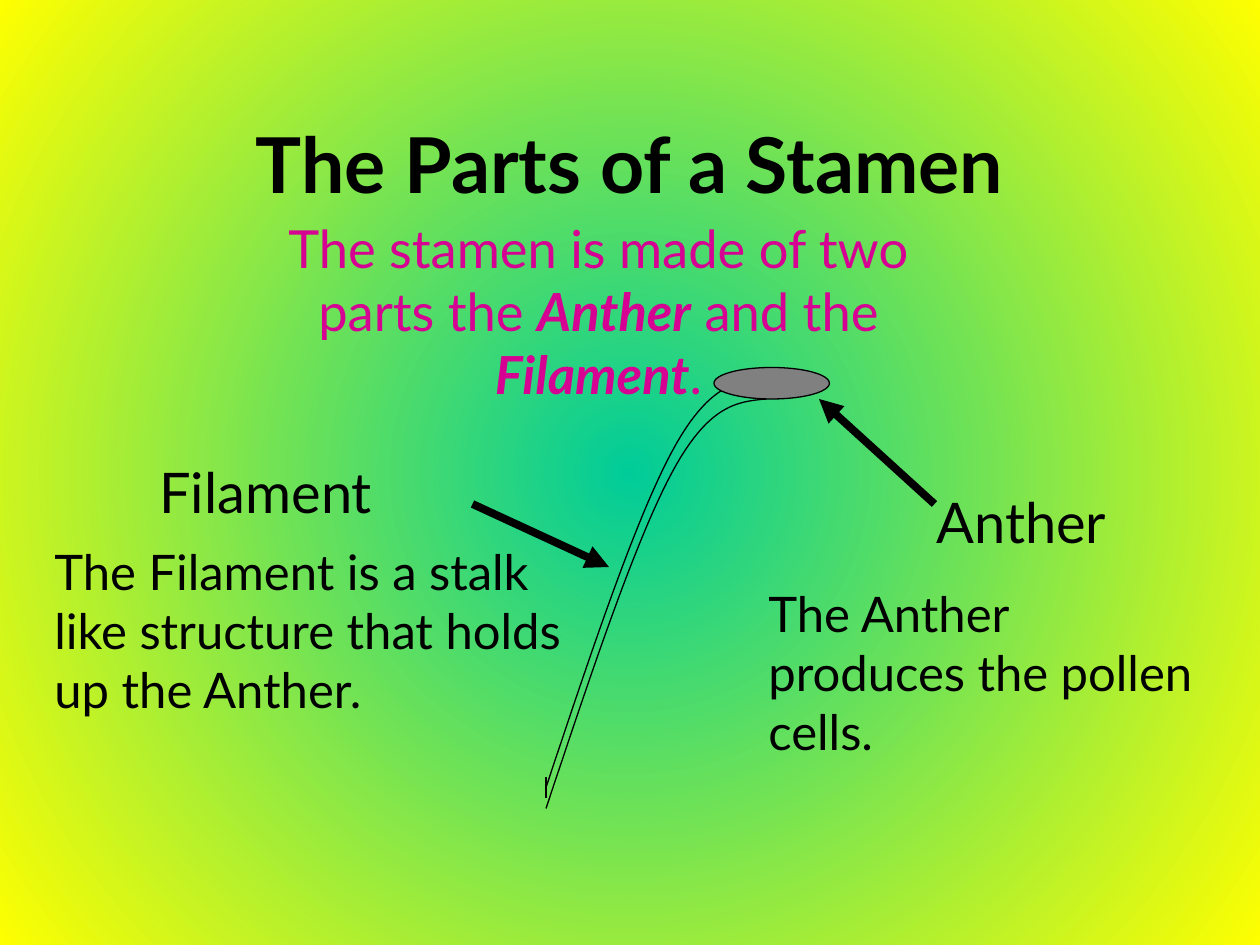
"""Build a slide that names the parts of a stamen."""
import pptx
import pptx.util
import pptx.dml.color
import pptx.enum.shapes
import pptx.enum.text
import pptx.oxml
import pptx.oxml.ns

BLACK = pptx.dml.color.RGBColor(0x00, 0x00, 0x00)
PINK = pptx.dml.color.RGBColor(0xD6, 0x00, 0x93)
GRAY = pptx.dml.color.RGBColor(0x80, 0x80, 0x80)
TEAL = pptx.dml.color.RGBColor(0x00, 0xCC, 0x99)
YELLOW = pptx.dml.color.RGBColor(0xFF, 0xFF, 0x00)
SPACE = pptx.oxml.ns.nsdecls("a")
LEFT = pptx.enum.text.PP_ALIGN.LEFT
CENTER = pptx.enum.text.PP_ALIGN.CENTER

deck = pptx.Presentation()
deck.slide_width = pptx.util.Inches(10)
deck.slide_height = pptx.util.Inches(7.5)
slide = deck.slides.add_slide(deck.slide_layouts[6])
shapes = slide.shapes
unit = deck.slide_width // 120


def grid(*cells):
    return [round(cell * unit) for cell in cells]


def write(cells, size, runs, color=BLACK, align=LEFT):
    box = shapes.add_textbox(*grid(*cells))
    box.text_frame.word_wrap = True
    par = box.text_frame.paragraphs[0]
    par.alignment = align
    par.font.name = "Lato"
    par.font.size = pptx.util.Pt(size)
    par.font.color.rgb = color
    for text, strong in runs:
        run = par.add_run()
        run.text = text
        if strong:
            run.font.bold = run.font.italic = True
    return box


back = slide.background.fill
back.gradient()
for stop, color in zip(back.gradient_stops, (TEAL, YELLOW)):
    stop.color.rgb = color
grad = slide.element.find(".//" + pptx.oxml.ns.qn("a:gradFill"))
grad.replace(
    grad.find(pptx.oxml.ns.qn("a:lin")),
    pptx.oxml.parse_xml(
        f'<a:path {SPACE} path="circle">'
        '<a:fillToRect l="50000" t="50000" r="50000" b="50000"/></a:path>'
    ),
)

title = write((9, 8, 102, 15), 44, [("The Parts of a Stamen", False)], align=CENTER)
title.text_frame.vertical_anchor = pptx.enum.text.MSO_ANCHOR.MIDDLE
title.text_frame.paragraphs[0].font.bold = True
write(
    (21, 20, 72, 13.2),
    30,
    [
        ("The stamen is made of two parts the ", False),
        ("Anther", True),
        (" and the ", False),
        ("Filament", True),
        (".", False),
    ],
    PINK,
    CENTER,
)

bends = [
    ((52, 75), (56.25, 62.25), (60.5, 49.5), (64, 43)),
    ((64, 43), (67.5, 36.5), (70.25, 36.25), (73, 36)),
]
steps = 24
stalk = []
for bend in bends:
    for step in range(steps + 1):
        t = step / steps
        parts = ((1 - t) ** 3, 3 * t * (1 - t) ** 2, 3 * t**2 * (1 - t), t**3)
        stalk.append([sum(p * dot[i] for p, dot in zip(parts, bend)) for i in (0, 1)])

edges = []
for drop in (0, 2):
    dots = [grid(x, y + drop) for x, y in stalk]
    pen = shapes.build_freeform(*dots[0])
    pen.add_line_segments(dots[1:], close=False)
    edge = pen.convert_to_shape()
    edge.fill.background()
    edges.append(edge)
    if drop == 0:
        anther = shapes.add_shape(
            pptx.enum.shapes.MSO_SHAPE.OVAL, *grid(68, 35, 11, 3)
        )
        anther.fill.solid()
        anther.fill.fore_color.rgb = GRAY
        edges.append(anther)
for edge in edges:
    edge.shadow.inherit = False
    edge.line.color.rgb = BLACK
    edge.line.width = pptx.util.Pt(0.75)

for ends, width in [
    ((52, 74, 52, 76), 0.75),
    ((89, 48, 78, 38), 4.5),
    ((45, 48, 58, 54), 4.5),
]:
    line = shapes.add_connector(pptx.enum.shapes.MSO_CONNECTOR.STRAIGHT, *grid(*ends))
    line.line.color.rgb = BLACK
    line.line.width = pptx.util.Pt(width)
    props = line.element.spPr
    if width > 1:
        props.find(pptx.oxml.ns.qn("a:ln")).append(
            pptx.oxml.parse_xml(f'<a:tailEnd {SPACE} type="triangle"/>')
        )
    props.append(pptx.oxml.parse_xml(f"<a:effectLst {SPACE}/>"))

for cells, size, text in [
    ((88, 45.8, 23, 7.5), 32, "Anther"),
    ((14, 43, 31, 7.5), 32, "Filament"),
    ((4, 51, 52, 18), 28, "The Filament is a stalk like structure that holds up the Anther."),
    ((72, 55, 45, 17.2), 28, "The Anther produces the pollen cells."),
]:
    write(cells, size, [(text, False)])

deck.save("out.pptx")
